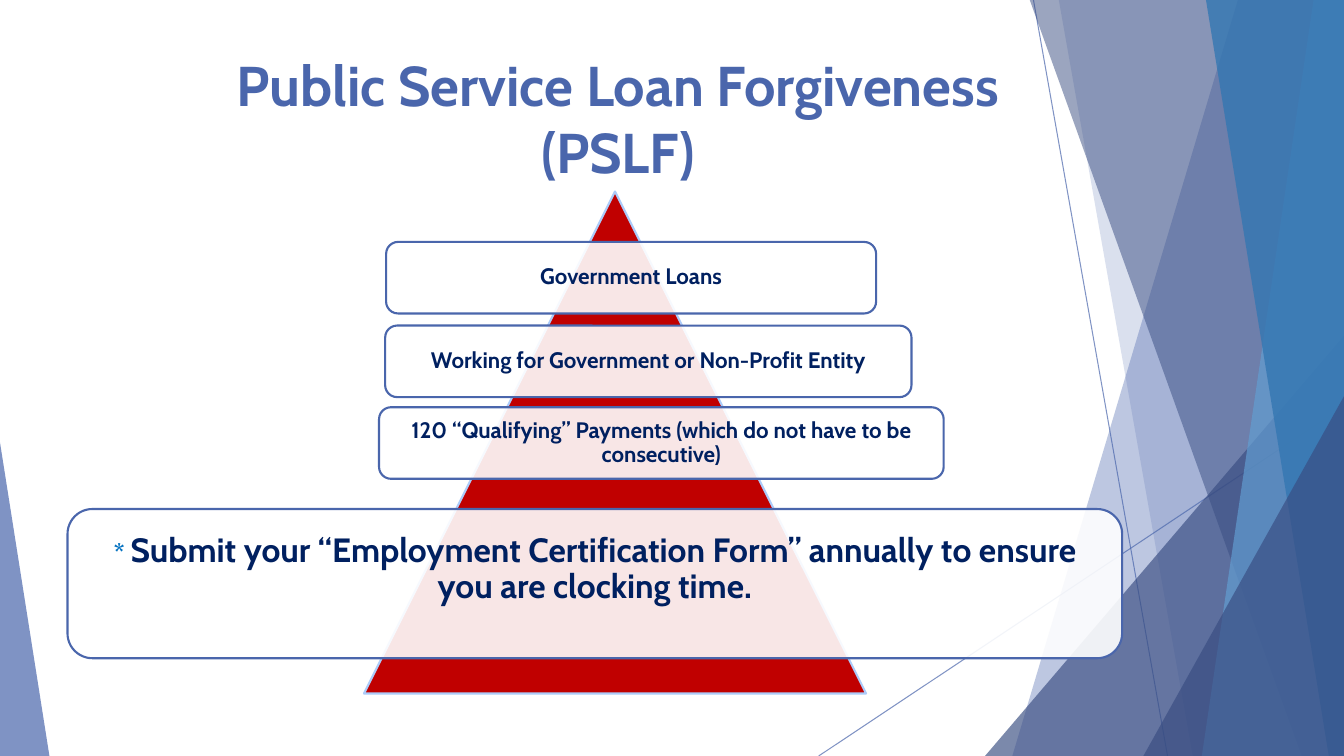
"""Build the Public Service Loan Forgiveness slide."""
from pptx import Presentation
from pptx import util as u
from pptx.dml.color import RGBColor
from pptx.enum import shapes, text
from pptx.oxml import ns, xmlchemy

PX = 9144
WIDTH, HEIGHT = 1333, 750
FONT = "Cabin"
BLUE, DARK_BLUE, NAVY, WHITE = "4A66AC", "384C81", "002060", "FFFFFF"

BACKDROP_LINES = [(1025, 0, 1158, 750), (1333, 403, 812, 750)]
BACKDROP_BANDS = [
    (1228, 1004, BLUE, 36),
    (1050, 1183, BLUE, 20),
    (1021, 1291, DARK_BLUE, 50),
    (1303, 1192, "629DD1", 70),
    (1196, 1318, "3477B2", 80),
]
BACKDROP_TRIANGLES = [
    (977, 333, 356, 417, 1, DARK_BLUE, 66),
    (1134, 393, 199, 357, 1, DARK_BLUE, 66),
    (0, 439, 49, 311, 0, BLUE, 70),
]
REQUIREMENTS = [
    (383, 240, 486, "Government Loans"),
    (382, 323, 522, "Working for Government or Non-Profit Entity"),
    (376, 404, 560, "120 “Qualifying” Payments (which do not have to be consecutive)"),
]
REMINDER = [
    ("* ", 18, "0070C0"),
    ("Submit your “Employment Certification Form” annually to ensure "
     "you are clocking time.", 24, NAVY),
]


def px(*lengths):
    """Turn px lengths into EMU."""
    return [length * PX for length in lengths]


def color(value):
    """Turn a hex string into a colour."""
    return RGBColor.from_string(value)


def set_opacity(parent, percent):
    """Set the opacity of the solid fill directly inside an XML element."""
    fill = parent.find(ns.qn("a:solidFill"))
    alpha = xmlchemy.OxmlElement("a:alpha")
    alpha.set("val", str(percent * 1000))
    fill[0].append(alpha)


def style_shape(shape, fill, opacity=100, line=None):
    """Give a shape its fill and an optional outline."""
    shape.shadow.inherit = False
    shape.fill.solid()
    shape.fill.fore_color.rgb = color(fill)
    if opacity < 100:
        set_opacity(shape._element.spPr, opacity)
    if line:
        shape.line.color.rgb = color(line)
        shape.line.width = u.Pt(1.5)
    else:
        shape.line.fill.background()


def add_line(slide, *ends):
    """Add a thin translucent backdrop line."""
    line = slide.shapes.add_connector(shapes.MSO_CONNECTOR.STRAIGHT, *px(*ends))
    line.line.color.rgb = color(BLUE)
    line.line.width = u.Pt(0.75)
    properties = line._element.spPr
    set_opacity(properties.find(ns.qn("a:ln")), 70)
    properties.append(xmlchemy.OxmlElement("a:effectLst"))


def add_band(slide, top_x, bottom_x, fill, opacity):
    """Add a slanted band that reaches the right edge of the slide."""
    builder = slide.shapes.build_freeform(top_x, -1, scale=PX)
    builder.add_line_segments([(WIDTH, -1), (WIDTH, HEIGHT), (bottom_x, HEIGHT)])
    style_shape(builder.convert_to_shape(), fill, opacity)


def add_triangle(slide, left, top, width, height, apex, fill, opacity=100, line=None):
    """Add a triangle whose apex lies at a fraction of its width."""
    triangle = slide.shapes.add_shape(
        shapes.MSO_SHAPE.ISOSCELES_TRIANGLE, *px(left, top, width, height))
    triangle.adjustments[0] = apex
    style_shape(triangle, fill, opacity, line)


def format_run(run, size, value):
    """Set the font of a run."""
    run.font.name = FONT
    run.font.size = u.Pt(size)
    run.font.bold = True
    run.font.color.rgb = color(value)


def add_card(slide, left, top, width, height, pieces, inset=11, bottom_inset=11):
    """Add a rounded card with centred text."""
    card = slide.shapes.add_shape(
        shapes.MSO_SHAPE.ROUNDED_RECTANGLE, *px(left, top, width, height))
    style_shape(card, WHITE, 90, BLUE)
    frame = card.text_frame
    frame.word_wrap = True
    frame.vertical_anchor = text.MSO_ANCHOR.MIDDLE
    frame.margin_left, frame.margin_right, frame.margin_top, frame.margin_bottom = px(
        inset, inset, inset, bottom_inset)
    paragraph = frame.paragraphs[0]
    paragraph.alignment = text.PP_ALIGN.CENTER
    paragraph.line_spacing = 0.9
    for words, size, value in pieces:
        run = paragraph.add_run()
        run.text = words
        format_run(run, size, value)


def set_title(slide, words):
    """Place and format the title."""
    title = slide.shapes.title
    title.left, title.top, title.width, title.height = px(143, 45, 940, 144)
    frame = title.text_frame
    frame.text = words
    frame.word_wrap = True
    frame.auto_size = text.MSO_AUTO_SIZE.NONE
    frame.vertical_anchor = text.MSO_ANCHOR.MIDDLE
    paragraph = frame.paragraphs[0]
    paragraph.alignment = text.PP_ALIGN.CENTER
    format_run(paragraph.runs[0], 40, BLUE)


def add_backdrop(slide):
    """Add the faceted shapes at the slide edges."""
    for ends in BACKDROP_LINES:
        add_line(slide, *ends)
    first, second, *others = BACKDROP_BANDS
    large, small, corner = BACKDROP_TRIANGLES
    add_band(slide, *first)
    add_band(slide, *second)
    add_triangle(slide, *large)
    for band in others:
        add_band(slide, *band)
    add_triangle(slide, *small)
    add_triangle(slide, *corner)


def main():
    """Build and save the presentation."""
    presentation = Presentation()
    presentation.slide_width, presentation.slide_height = px(WIDTH, HEIGHT)
    slide = presentation.slides.add_slide(presentation.slide_layouts[5])
    set_title(slide, "Public Service Loan Forgiveness (PSLF)")
    add_backdrop(slide)
    add_triangle(slide, 361, 190, 498, 498, 0.5, "C00000", line="ACCBF9")
    for left, top, width, words in REQUIREMENTS:
        add_card(slide, left, top, width, 71, [(words, 16, NAVY)])
    add_card(slide, 67, 505, 1046, 148, REMINDER, inset=15, bottom_inset=43)
    presentation.save("out.pptx")


if __name__ == "__main__":
    main()
